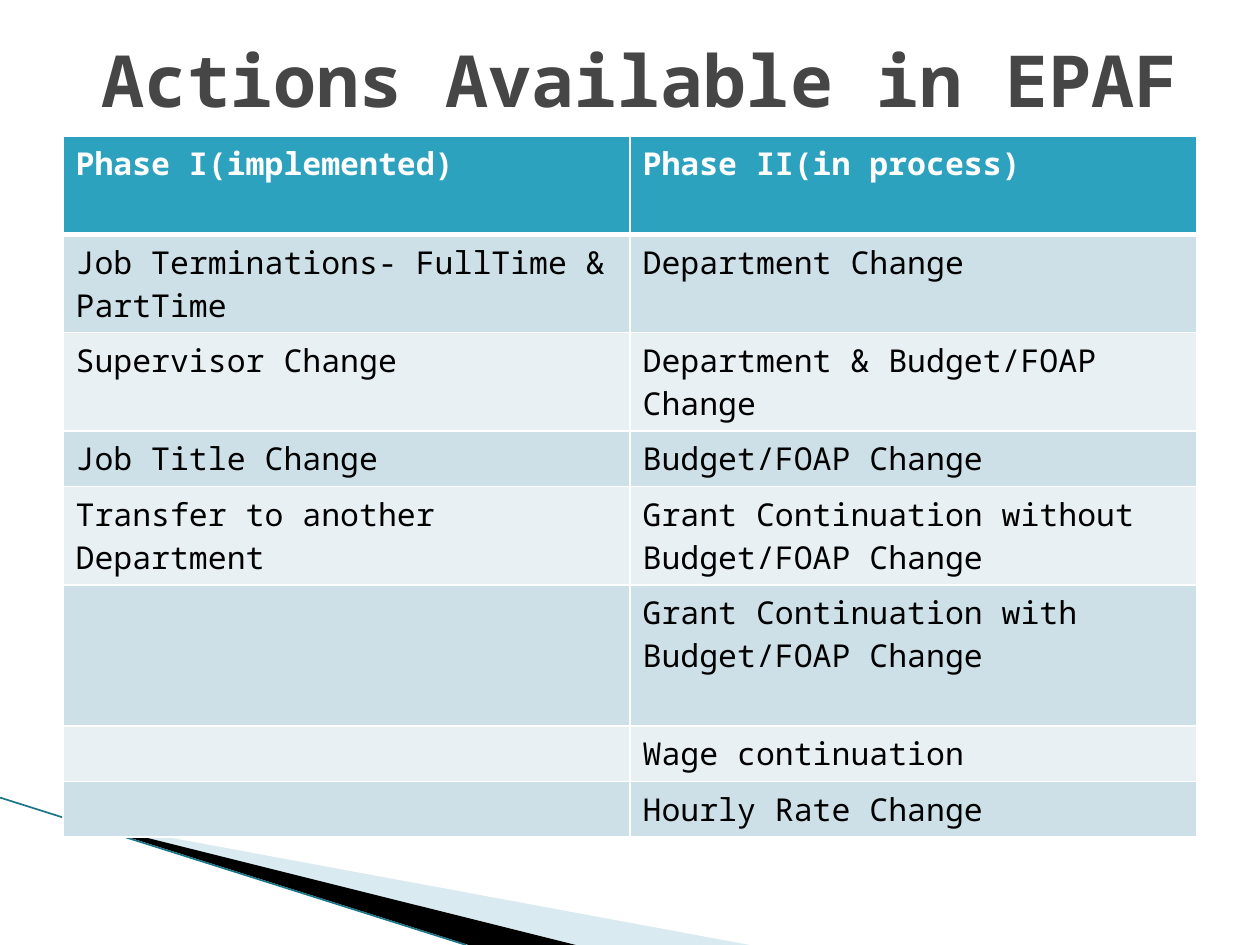
from lxml import etree
from pptx import Presentation
from pptx.dml.color import RGBColor
from pptx.enum.shapes import MSO_CONNECTOR
from pptx.enum.text import MSO_ANCHOR, PP_ALIGN
from pptx.oxml.ns import qn
from pptx.util import Inches, Pt

STRAIGHT = MSO_CONNECTOR.STRAIGHT
MIDDLE = MSO_ANCHOR.MIDDLE
CENTER = PP_ALIGN.CENTER

WHITE = RGBColor(0xFF, 0xFF, 0xFF)
BLACK = RGBColor(0x00, 0x00, 0x00)
GRAY = RGBColor(0x46, 0x46, 0x46)
TEAL = RGBColor(0x2D, 0xA2, 0xBF)
DARK_TEAL = RGBColor(0x1B, 0x75, 0x87)
PALE_BLUE = RGBColor(0xA0, 0xCB, 0xDC)
BAND_DARK = RGBColor(0xCD, 0xE0, 0xE8)
BAND_LIGHT = RGBColor(0xE8, 0xF0, 0xF4)

FONT = "Noto Sans Mono"
TITLE = "Actions Available in EPAF"
TITLE_FORMAT = {"name": FONT, "size": Pt(41), "bold": True}
HEADER_FORMAT = {"name": FONT, "size": Pt(18), "bold": True}
BODY_FORMAT = {"name": FONT, "size": Pt(18), "bold": False}

ROWS = [
    ("Phase I(implemented)", "Phase II(in process)"),
    ("Job Terminations- FullTime & PartTime", "Department Change"),
    ("Supervisor Change", "Department & Budget/FOAP Change"),
    ("Job Title Change", "Budget/FOAP Change"),
    ("Transfer to another Department", "Grant Continuation without Budget/FOAP Change"),
    ("", "Grant Continuation with Budget/FOAP Change"),
    ("", "Wage continuation"),
    ("", "Hourly Rate Change"),
]
LINES_PER_ROW = [2, 2, 2, 1, 2, 3, 1, 1]
LINE_HEIGHT = 0.34
CELL_PADDING = 0.1
COLUMN_WIDTH = 4.5

WEDGES = [
    ([(0.55, 6.5), (5.95, 7.5), (4.56, 7.5)], PALE_BLUE, 40),
    ([(0.53, 6.49), (4.57, 7.5), (3.72, 7.5)], BLACK, 100),
]


def format_font(font, values, color):
    for name, value in values.items():
        setattr(font, name, value)
    font.color.rgb = color


def add_wedge(slide, points, color, opacity):
    corners = [(Inches(x), Inches(y)) for x, y in points]
    builder = slide.shapes.build_freeform(*corners[0])
    builder.add_line_segments(corners[1:], close=True)
    shape = builder.convert_to_shape()
    shape.shadow.inherit = False
    shape.line.fill.background()
    shape.fill.solid()
    shape.fill.fore_color.rgb = color
    if opacity < 100:
        color_element = shape.fill._xPr.find(".//" + qn("a:srgbClr"))
        etree.SubElement(color_element, qn("a:alpha"), val=str(opacity * 1000))


def add_edge_line(slide):
    line = slide.shapes.add_connector(
        STRAIGHT, Inches(0), Inches(6.33), Inches(3.7), Inches(7.5))
    line.line.color.rgb = DARK_TEAL
    line.line.width = Pt(0.95)
    etree.SubElement(line._element.spPr, qn("a:effectLst"))


def set_borders(cell, bottom_width):
    properties = cell._tc.get_or_add_tcPr()
    widths = {"lnL": 1, "lnR": 1, "lnT": 1, "lnB": bottom_width}
    for index, (side, width) in enumerate(widths.items()):
        border = etree.Element(qn("a:" + side), w=str(Pt(width)))
        fill = etree.SubElement(border, qn("a:solidFill"))
        etree.SubElement(fill, qn("a:srgbClr"), val=str(WHITE))
        properties.insert(index, border)


def add_actions_table(slide):
    heights = [lines * LINE_HEIGHT + CELL_PADDING for lines in LINES_PER_ROW]
    columns = len(ROWS[0])
    table = slide.shapes.add_table(
        len(ROWS), columns, Inches(0.5), Inches(1.08),
        Inches(columns * COLUMN_WIDTH), Inches(sum(heights))).table
    for row_index, texts in enumerate(ROWS):
        table.rows[row_index].height = Inches(heights[row_index])
        is_header = row_index == 0
        band = BAND_DARK if row_index % 2 else BAND_LIGHT
        for column_index, text in enumerate(texts):
            cell = table.cell(row_index, column_index)
            cell.fill.solid()
            cell.fill.fore_color.rgb = TEAL if is_header else band
            set_borders(cell, 3 if is_header else 1)
            if text:
                cell.text = text
                format_font(cell.text_frame.paragraphs[0].runs[0].font,
                            HEADER_FORMAT if is_header else BODY_FORMAT,
                            WHITE if is_header else BLACK)


def add_title(slide):
    title = slide.shapes.title
    title.left, title.top = Inches(0.58), Inches(0)
    title.width, title.height = Inches(9), Inches(1.25)
    title.text_frame.text = TITLE
    title.text_frame.vertical_anchor = MIDDLE
    paragraph = title.text_frame.paragraphs[0]
    paragraph.alignment = CENTER
    format_font(paragraph.runs[0].font, TITLE_FORMAT, GRAY)


def main():
    presentation = Presentation()
    presentation.slide_width = Inches(10)
    presentation.slide_height = Inches(7.5)
    slide = presentation.slides.add_slide(presentation.slide_layouts[5])
    add_title(slide)
    for points, color, opacity in WEDGES:
        add_wedge(slide, points, color, opacity)
    add_edge_line(slide)
    add_actions_table(slide)
    presentation.save("out.pptx")


if __name__ == "__main__":
    main()
